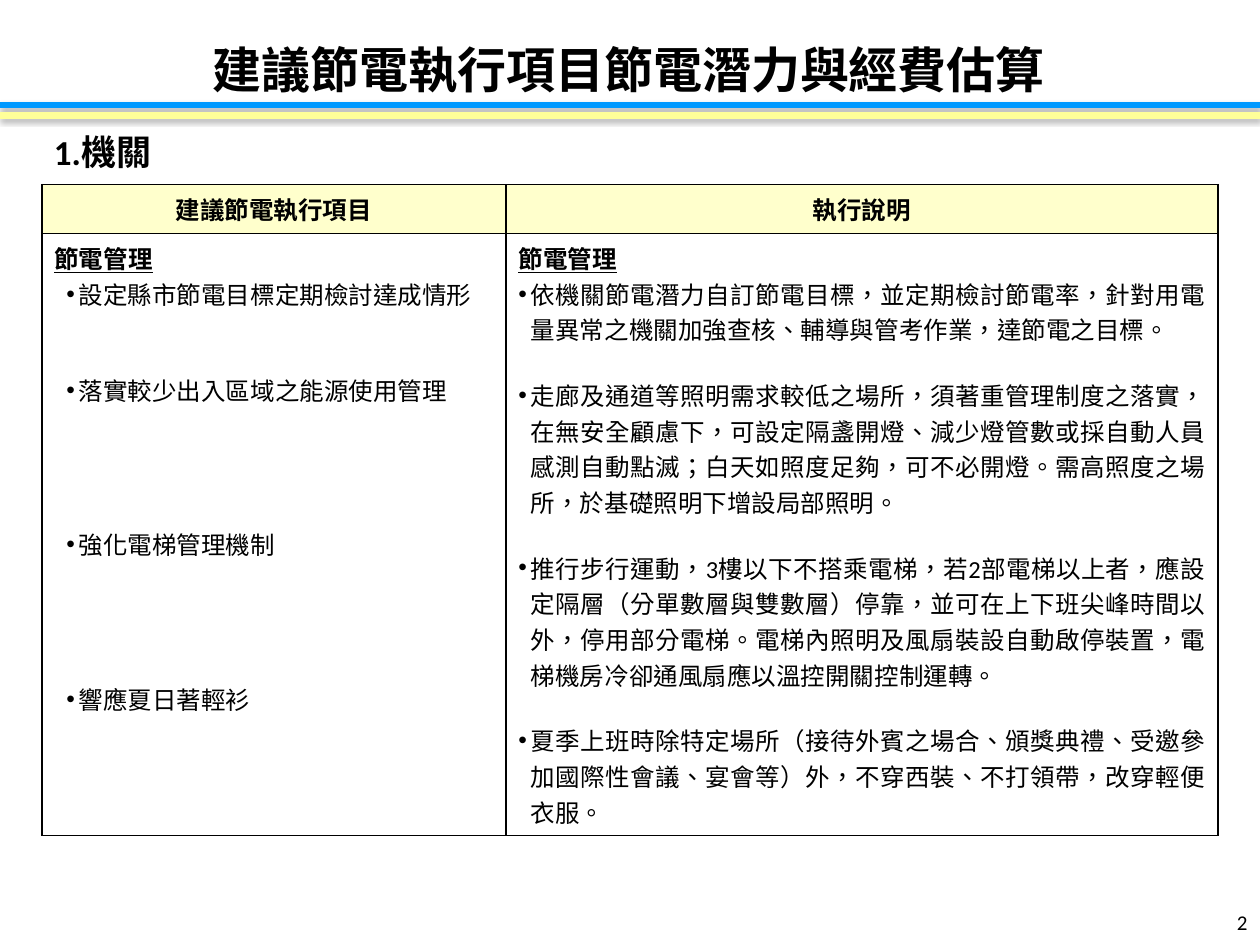
from dataclasses import dataclass

from lxml import etree
from pptx import Presentation
from pptx.dml.color import RGBColor
from pptx.enum.lang import MSO_LANGUAGE_ID
from pptx.enum.shapes import MSO_CONNECTOR
from pptx.enum.text import MSO_ANCHOR, PP_ALIGN
from pptx.oxml import parse_xml
from pptx.oxml.ns import nsdecls, qn
from pptx.util import Pt

LEFT, RIGHT = PP_ALIGN.LEFT, PP_ALIGN.RIGHT
CENTER, JUSTIFY = PP_ALIGN.CENTER, PP_ALIGN.JUSTIFY
TOP, MIDDLE = MSO_ANCHOR.TOP, MSO_ANCHOR.MIDDLE
STRAIGHT = MSO_CONNECTOR.STRAIGHT
CHINESE = MSO_LANGUAGE_ID.TRADITIONAL_CHINESE
LATIN, ASIAN = "Calibri", "Noto Sans CJK TC"
BLACK, CREAM, BLUE, YELLOW = "000000", "FFFFCC", "0099FF", "FFFF99"
WIDTH, HEIGHT = 720, 540


@dataclass
class Label:
    text: str
    left: float
    top: float
    width: float
    height: float
    size: float
    bold: bool
    align: PP_ALIGN
    anchor: MSO_ANCHOR


@dataclass
class Column:
    head: str
    topic: str
    items: list[str]
    gaps: list[float]
    margin: float
    width: float


LABELS = [
    Label("1.機關", 23.75, 71.3, 672.5, 34, 20, True, LEFT, TOP),
    Label("2", 684.7, 512.6, 35.3, 28.8, 12, False, RIGHT, MIDDLE),
    Label("建議節電執行項目節電潛力與經費估算", -3.6, 15.1, 725.8, 49, 28, True, CENTER, MIDDLE),
]

COLUMNS = [
    Column("建議節電執行項目", "節電管理", [
        "設定縣市節電目標定期檢討達成情形",
        "落實較少出入區域之能源使用管理",
        "強化電梯管理機制",
        "響應夏日著輕衫",
    ], [0, 34.5, 68, 68], 13.9, 265.2),
    Column("執行說明", "節電管理", [
        "依機關節電潛力自訂節電目標，並定期檢討節電率，針對用電量異常之機關加強查核、"
        "輔導與管考作業，達節電之目標。",
        "走廊及通道等照明需求較低之場所，須著重管理制度之落實，在無安全顧慮下，"
        "可設定隔盞開燈、減少燈管數或採自動人員感測自動點滅；白天如照度足夠，可不必開燈。"
        "需高照度之場所，於基礎照明下增設局部照明。",
        "推行步行運動，3樓以下不搭乘電梯，若2部電梯以上者，應設定隔層"
        "（分單數層與雙數層）停靠，並可在上下班尖峰時間以外，停用部分電梯。"
        "電梯內照明及風扇裝設自動啟停裝置，電梯機房冷卻通風扇應以溫控開關控制運轉。",
        "夏季上班時除特定場所（接待外賓之場合、頒獎典禮、受邀參加國際性會議、宴會等）外，"
        "不穿西裝、不打領帶，改穿輕便衣服。",
    ], [0, 17, 17, 17], 7.1, 407),
]


def color(code: str) -> RGBColor:
    return RGBColor.from_string(code)


def style(para, size: float, bold: bool, align: PP_ALIGN, under: bool = False) -> None:
    para.alignment = align
    for run in para.runs:
        font = run.font
        font.name, font.size, font.bold = LATIN, Pt(size), bold
        font.underline = under
        font.color.rgb = color(BLACK)
        font.language_id = CHINESE
        face = etree.Element(qn("a:ea"), typeface=ASIAN)
        run._r.get_or_add_rPr().find(qn("a:latin")).addnext(face)


def bullet(para, margin: float) -> None:
    props = para._p.get_or_add_pPr()
    props.set("marL", str(Pt(margin)))
    props.set("indent", str(-Pt(7.1)))
    etree.SubElement(props, qn("a:buFont"), typeface="Arial")
    etree.SubElement(props, qn("a:buChar"), char="•")


def border(cell) -> None:
    props = cell._tc.get_or_add_tcPr()
    for side in ("lnL", "lnR", "lnT", "lnB"):
        props.append(parse_xml(
            f'<a:{side} {nsdecls("a")} w="{Pt(1)}"><a:solidFill>'
            f'<a:srgbClr val="{BLACK}"/></a:solidFill></a:{side}>'))


def add_label(slide, item: Label) -> None:
    box = slide.shapes.add_textbox(
        Pt(item.left), Pt(item.top), Pt(item.width), Pt(item.height))
    frame = box.text_frame
    frame.word_wrap = True
    frame.vertical_anchor = item.anchor
    frame.text = item.text
    style(frame.paragraphs[0], item.size, item.bold, item.align)


def add_rule(slide, y: float, code: str) -> None:
    rule = slide.shapes.add_connector(STRAIGHT, Pt(0), Pt(y), Pt(WIDTH), Pt(y))
    rule.line.color.rgb = color(code)
    rule.line.width = Pt(3.75)
    rule._element.spPr.append(parse_xml(
        f'<a:effectLst {nsdecls("a")}><a:outerShdw blurRad="{Pt(3.1)}" '
        f'dist="{Pt(1.6)}" dir="5400000" rotWithShape="0">'
        f'<a:srgbClr val="{BLACK}"><a:alpha val="38000"/></a:srgbClr>'
        '</a:outerShdw></a:effectLst>'))


def add_grid(slide, cols: list[Column]) -> None:
    total = sum(col.width for col in cols)
    grid = slide.shapes.add_table(
        2, len(cols), Pt(23.9), Pt(105.5), Pt(total), Pt(372)).table
    grid.rows[0].height, grid.rows[1].height = Pt(28), Pt(344)
    for i, col in enumerate(cols):
        grid.columns[i].width = Pt(col.width)
        head, body = grid.cell(0, i), grid.cell(1, i)
        for cell in (head, body):
            border(cell)
        head.fill.solid()
        head.fill.fore_color.rgb = color(CREAM)
        body.fill.background()

        head.text_frame.text = col.head
        style(head.text_frame.paragraphs[0], 14, True, CENTER)
        frame = body.text_frame
        frame.text = col.topic
        style(frame.paragraphs[0], 14, True, JUSTIFY, under=True)
        for text, gap in zip(col.items, col.gaps):
            para = frame.add_paragraph()
            para.text = text
            para.space_before = Pt(gap)
            style(para, 14, False, JUSTIFY)
            bullet(para, col.margin)


def main() -> None:
    deck = Presentation()
    deck.slide_width, deck.slide_height = Pt(WIDTH), Pt(HEIGHT)
    slide = deck.slides.add_slide(deck.slide_layouts[6])

    # Plan table
    add_grid(slide, COLUMNS)

    # Heading, page number and title
    for item in LABELS:
        add_label(slide, item)

    # Rules under the title
    for y, code in ((60, BLUE), (66, YELLOW)):
        add_rule(slide, y, code)

    deck.save("out.pptx")


if __name__ == "__main__":
    main()
